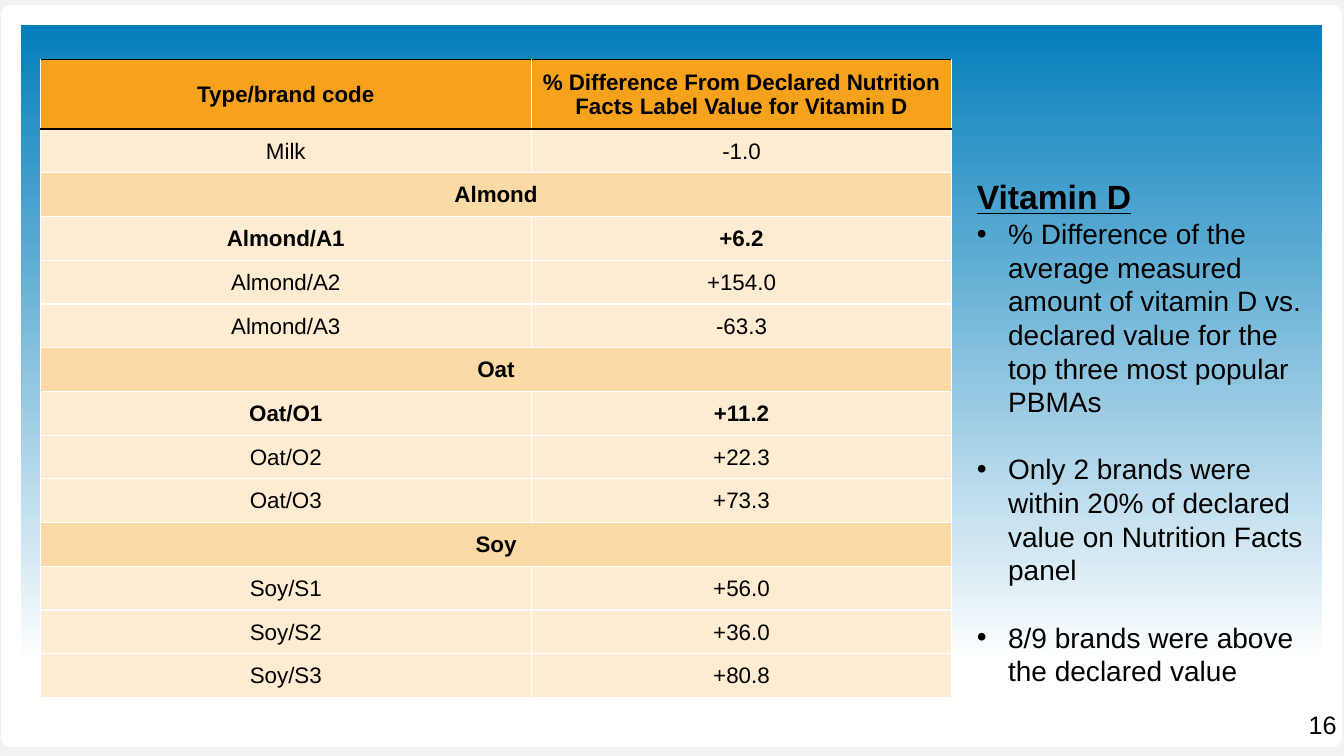
from lxml.etree import SubElement
from pptx import Presentation
from pptx.dml.color import RGBColor
from pptx.enum.shapes import MSO_SHAPE
from pptx.enum.text import MSO_ANCHOR, MSO_AUTO_SIZE, PP_ALIGN
from pptx.oxml.ns import qn
from pptx.util import Inches, Pt

HEADER = ("Type/brand code",
          "% Difference From Declared Nutrition Facts Label Value for Vitamin D")
BASELINE = ("Milk", "-1.0")
GROUPS = {
    "Almond": [("Almond/A1", "+6.2"), ("Almond/A2", "+154.0"), ("Almond/A3", "-63.3")],
    "Oat": [("Oat/O1", "+11.2"), ("Oat/O2", "+22.3"), ("Oat/O3", "+73.3")],
    "Soy": [("Soy/S1", "+56.0"), ("Soy/S2", "+36.0"), ("Soy/S3", "+80.8")],
}
WITHIN_LIMIT = {"Almond/A1", "Oat/O1"}
HEADING = "Vitamin D"
POINTS = [
    "% Difference of the average measured amount of vitamin D vs. declared value "
    "for the top three most popular PBMAs",
    "Only 2 brands were within 20% of declared value on Nutrition Facts panel",
    "8/9 brands were above the declared value",
]
PAGE = "16"

THEME = {
    "font": "Arial", "ink": "000000", "white": "FFFFFF", "page": "F2F2F2",
    "blue": "007CBA", "header": "F6A21D", "group": "FBDAA5", "row": "FDECD2",
    "table_size": 16, "heading_size": 24, "body_size": 20, "page_size": 18,
}
COLUMNS = (4.87, 4.17)
HEADER_HEIGHT, ROW_HEIGHT = 0.69, 0.434


def color(name):
    return RGBColor.from_string(THEME[name])


def add_run(p, text, size, bold=False, underline=False):
    r = p.add_run()
    r.text = text
    f = r.font
    f.name, f.size, f.bold, f.underline = THEME["font"], Pt(THEME[size]), bold, underline
    f.color.rgb = color("ink")


def add_borders(cell, top, bottom):
    """Draw 1 pt cell borders, placed ahead of the fill as the schema requires."""
    tc_pr = cell._tc.get_or_add_tcPr()
    sides = {"lnL": "white", "lnR": "white", "lnT": top, "lnB": bottom}
    for i, (side, name) in enumerate(sides.items()):
        ln = SubElement(tc_pr, qn("a:" + side), w=str(Pt(1)))
        fill = SubElement(ln, qn("a:solidFill"))
        SubElement(fill, qn("a:srgbClr"), val=THEME[name])
        tc_pr.insert(i, ln)


def add_background(s):
    s.background.fill.solid()
    s.background.fill.fore_color.rgb = color("page")
    panel = s.shapes.add_shape(MSO_SHAPE.RECTANGLE, Inches(0.11), Inches(0.15),
                               Inches(13.1), Inches(7.16))
    panel.shadow.inherit = False
    panel.fill.gradient()
    panel.fill.gradient_angle = 270
    for stop, name, position in zip(panel.fill.gradient_stops, ("blue", "white"), (0, 0.9)):
        stop.color.rgb = color(name)
        stop.position = position
    panel.line.color.rgb = color("white")
    panel.line.width = Pt(14)
    SubElement(panel.line._get_or_add_ln(), qn("a:round"))


def add_results_table(s):
    rows = [("header", HEADER), ("row", BASELINE)]
    for group, brands in GROUPS.items():
        rows.append(("group", (group, "")))
        rows += [("row", brand) for brand in brands]

    height = HEADER_HEIGHT + ROW_HEIGHT * (len(rows) - 1)
    table = s.shapes.add_table(len(rows), len(COLUMNS), Inches(0.4), Inches(0.59),
                               Inches(sum(COLUMNS)), Inches(height)).table
    for column, width in zip(table.columns, COLUMNS):
        column.width = Inches(width)
    for i, (kind, values) in enumerate(rows):
        table.rows[i].height = Inches(ROW_HEIGHT if i else HEADER_HEIGHT)
        bold = kind != "row" or values[0] in WITHIN_LIMIT
        for j, text in enumerate(values):
            cell = table.cell(i, j)
            cell.fill.solid()
            cell.fill.fore_color.rgb = color(kind)
            cell.vertical_anchor = MSO_ANCHOR.MIDDLE
            cell.margin_left = cell.margin_right = cell.margin_top = Inches(0.01)
            cell.margin_bottom = 0
            add_borders(cell, "ink" if i < 2 else "white", "ink" if i == 0 else "white")
            if text:
                p = cell.text_frame.paragraphs[0]
                p.alignment = PP_ALIGN.CENTER
                add_run(p, text, "table_size", bold)
        if kind == "group":
            table.cell(i, 0).merge(table.cell(i, 1))


def add_text_box(s, left, top, width, height, wrap):
    tf = s.shapes.add_textbox(Inches(left), Inches(top), Inches(width),
                              Inches(height)).text_frame
    tf.word_wrap = wrap
    tf.auto_size = MSO_AUTO_SIZE.SHAPE_TO_FIT_TEXT
    return tf


def add_findings(s):
    tf = add_text_box(s, 9.59, 1.7, 3.52, 5.22, True)
    add_run(tf.paragraphs[0], HEADING, "heading_size", bold=True, underline=True)
    for i, point in enumerate(POINTS):
        p = tf.add_paragraph()
        p.space_before = Pt(24 if i else 0)
        p_pr = p._p.get_or_add_pPr()
        p_pr.set("marL", str(Inches(0.31)))
        p_pr.set("indent", str(-Inches(0.31)))
        SubElement(p_pr, qn("a:buFont"), typeface=THEME["font"])
        SubElement(p_pr, qn("a:buChar"), char="•")
        add_run(p, point, "body_size")


def main():
    prs = Presentation()
    prs.slide_width, prs.slide_height = Inches(13.33), Inches(7.5)
    s = prs.slides.add_slide(prs.slide_layouts[6])
    add_background(s)
    add_results_table(s)
    add_findings(s)
    page = add_text_box(s, 12.88, 6.99, 0.48, 0.4, False)
    add_run(page.paragraphs[0], PAGE, "page_size")
    prs.save("out.pptx")


if __name__ == "__main__":
    main()
